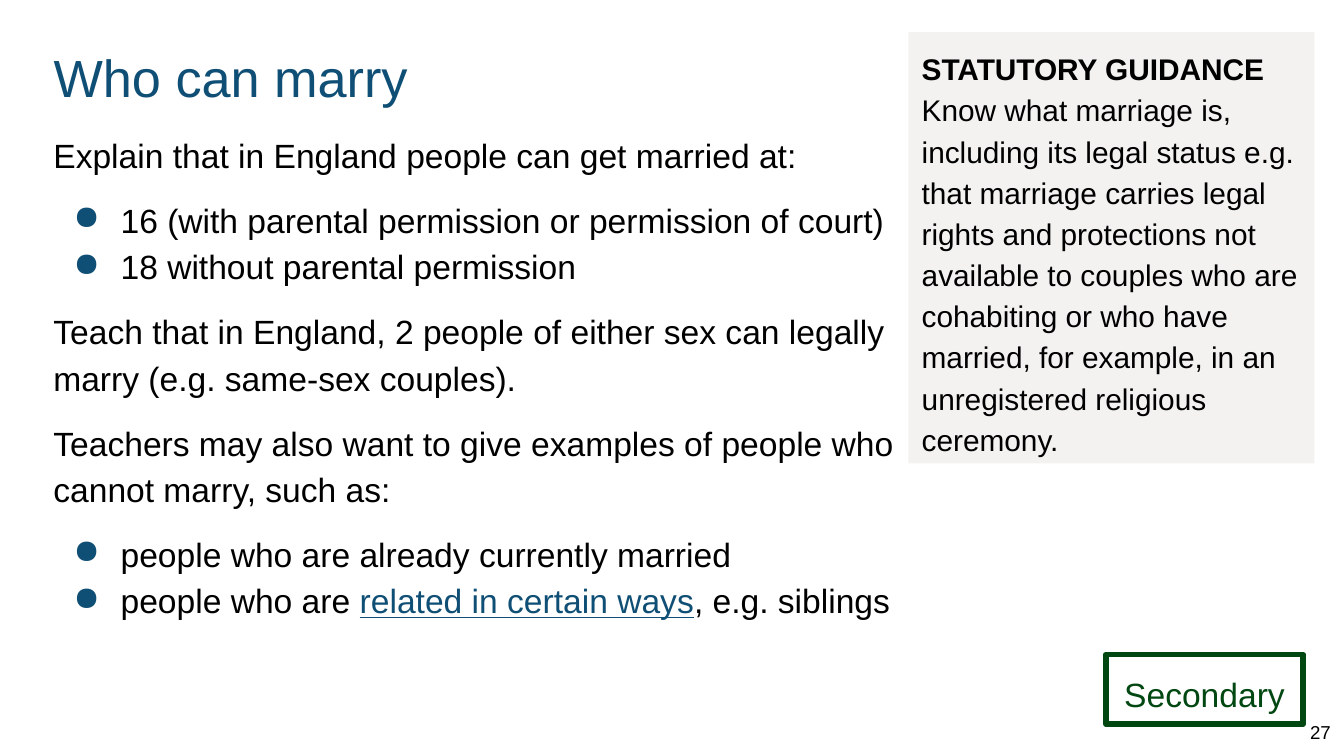
"""Build the "Who can marry" teaching slide."""
from lxml import etree
from pptx import Presentation
from pptx.dml.color import RGBColor
from pptx.enum import shapes, text
from pptx.oxml import ns
from pptx.util import Cm, Pt

COLOURS = {"blue": "104F75", "black": "000000", "grey": "F3F2F1", "green": "004712"}
FONT = "Arial"
INSET = Cm(0.254)
LEFT, TOP = 0.76, 0.61

TITLE = "Who can marry"
# Each entry: bulleted, space before in points, runs of (text, is link)
BODY = [
    (False, 0, [("Explain that in England people can get married at:", False)]),
    (True, 10, [("16 (with parental permission or permission of court)", False)]),
    (True, 0, [("18 without parental permission", False)]),
    (False, 10, [("Teach that in England, 2 people of either sex can legally marry "
                  "(e.g. same-sex couples).", False)]),
    (False, 10, [("Teachers may also want to give examples of people who cannot marry, "
                  "such as:", False)]),
    (True, 10, [("people who are already currently married", False)]),
    (True, 0, [("people who are ", False), ("related in certain ways", True),
               (", e.g. siblings", False)]),
]
GUIDANCE_HEADING = "STATUTORY GUIDANCE"
GUIDANCE = ("Know what marriage is, including its legal status e.g. that marriage carries "
            "legal rights and protections not available to couples who are cohabiting or who "
            "have married, for example, in an unregistered religious ceremony.")
STAGE = "Secondary"
PAGE_NUMBER = "27"


def colour(name):
    return RGBColor.from_string(COLOURS[name])


def set_frame(box, anchor=text.MSO_ANCHOR.TOP):
    frame = box.text_frame
    frame.word_wrap = True
    frame.auto_size = text.MSO_AUTO_SIZE.NONE
    frame.vertical_anchor = anchor
    frame.margin_left = frame.margin_right = INSET
    frame.margin_top = frame.margin_bottom = INSET
    return frame


def set_para(para, align=text.PP_ALIGN.LEFT, line=1.15, before=0):
    para.alignment = align
    para.line_spacing = line
    para.space_before = Pt(before)
    return para


def add_span(para, words, size, shade="black", bold=False, underline=False):
    span = para.add_run()
    span.text = words
    font = span.font
    font.name, font.size = FONT, Pt(size)
    font.bold, font.underline = bold, underline
    font.color.rgb = colour(shade)


def add_bullet(para):
    props = para._p.get_or_add_pPr()
    props.set("marL", str(Cm(1.27)))
    props.set("indent", str(-Cm(0.89)))
    shade = etree.SubElement(props, ns.qn("a:buClr"))
    etree.SubElement(shade, ns.qn("a:srgbClr"), val=COLOURS["blue"])
    etree.SubElement(props, ns.qn("a:buChar"), char="●")


def add_panel(page, left, top, width, height):
    panel = page.shapes.add_shape(shapes.MSO_SHAPE.RECTANGLE,
                                  Cm(left), Cm(top), Cm(width), Cm(height))
    panel.shadow.inherit = False
    panel.fill.background()
    panel.line.fill.background()
    return panel


def add_title(page):
    title = page.shapes.title
    title.left, title.top, title.width, title.height = Cm(LEFT), Cm(TOP), Cm(16.28), Cm(1.6)
    para = set_para(set_frame(title).paragraphs[0], line=1.0)
    add_span(para, TITLE, 28, "blue")


def add_body(page):
    box = page.shapes.add_textbox(Cm(LEFT), Cm(2.18), Cm(16.41), Cm(10.19))
    frame = set_frame(box)
    for index, (bulleted, before, spans) in enumerate(BODY):
        para = frame.add_paragraph() if index else frame.paragraphs[0]
        set_para(para, before=before)
        if bulleted:
            add_bullet(para)
        for words, link in spans:
            add_span(para, words, 18, "blue" if link else "black", underline=link)


def add_guidance(page):
    panel = add_panel(page, 17.17, TOP, 7.67, 8.15)
    panel.fill.solid()
    panel.fill.fore_color.rgb = colour("grey")
    para = set_para(set_frame(panel).paragraphs[0])
    add_span(para, GUIDANCE_HEADING, 16, bold=True)
    para.add_line_break()
    add_span(para, GUIDANCE, 16)


def add_stage(page):
    badge = add_panel(page, 20.9, 12.37, 3.73, 1.32)
    badge.line.color.rgb = colour("green")
    badge.line.width = Pt(3)
    etree.SubElement(badge.line._get_or_add_ln(), ns.qn("a:round"))
    para = set_para(set_frame(badge).paragraphs[0], text.PP_ALIGN.CENTER)
    add_span(para, STAGE, 18, "green")


def add_page_number(page):
    box = page.shapes.add_textbox(Cm(24.41), Cm(13.36), Cm(0.99), Cm(0.94))
    frame = set_frame(box, text.MSO_ANCHOR.MIDDLE)
    para = set_para(frame.paragraphs[0], text.PP_ALIGN.RIGHT, line=1.0)
    add_span(para, PAGE_NUMBER, 10)


def main():
    deck = Presentation()
    deck.slide_width, deck.slide_height = Cm(25.4), Cm(14.29)
    page = deck.slides.add_slide(deck.slide_layouts[5])
    for add_part in (add_title, add_body, add_guidance, add_stage, add_page_number):
        add_part(page)
    deck.save("out.pptx")


if __name__ == "__main__":
    main()
